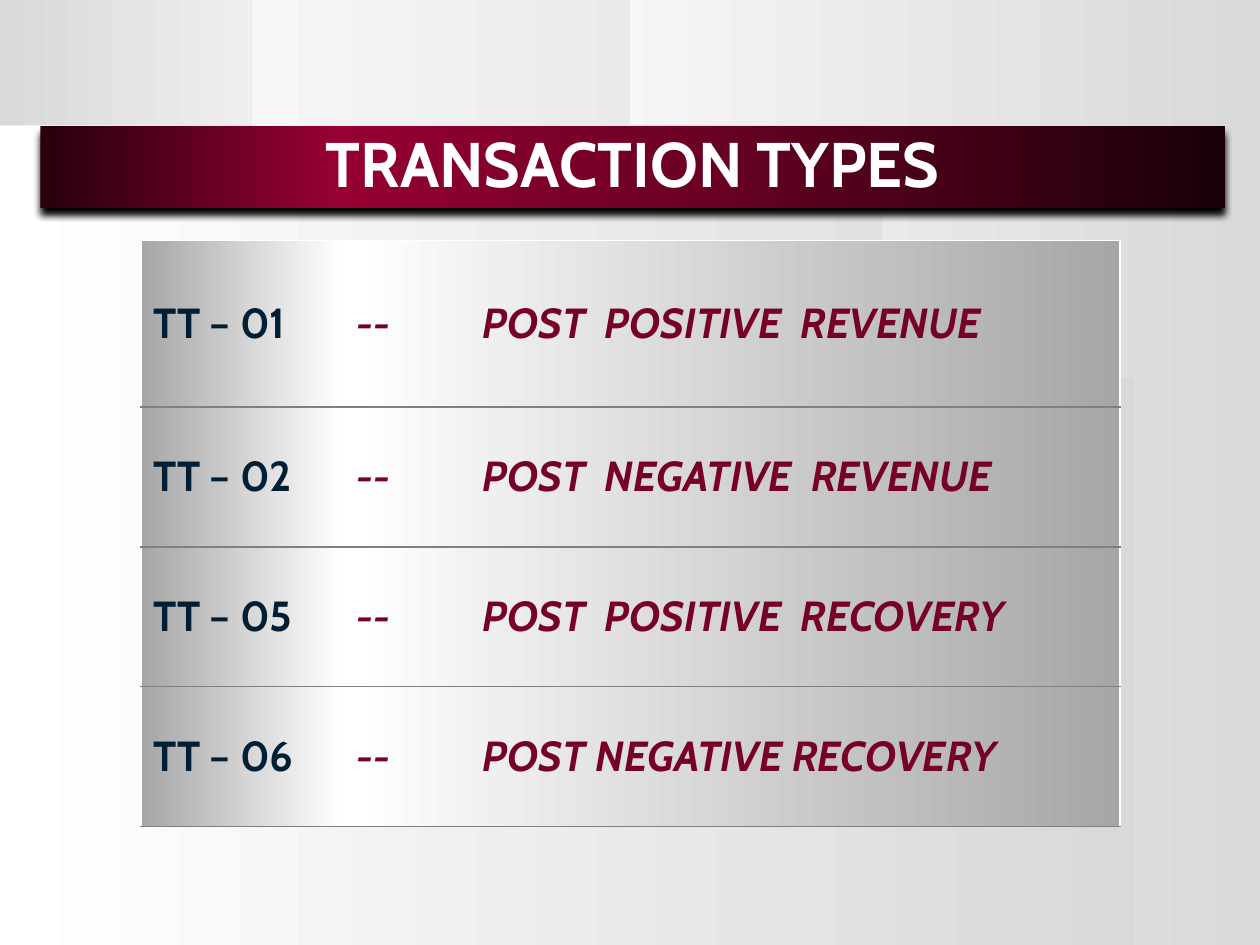
import math
from lxml import etree
from pptx import Presentation
from pptx.dml.color import RGBColor
from pptx.enum import shapes, text
from pptx.oxml import ns
from pptx.util import Inches, Pt

HEADING = "TRANSACTION TYPES"
TRANSACTIONS = [
    ("TT – 01", "--\tPOST  POSITIVE  REVENUE"),
    ("TT – 02", "--\tPOST  NEGATIVE  REVENUE"),
    ("TT – 05", "--\tPOST  POSITIVE  RECOVERY"),
    ("TT – 06", "--\tPOST NEGATIVE RECOVERY"),
]
COLUMNS = [(1.61, "001E34", False, 0), (6.16, "760027", True, 180)]
ROW_HEIGHTS = [1.32, 1.11, 1.11, 1.11]
BACKDROP = [(0, "D9D9D9"), (100, "FFFFFF")]
BANNER = [(1, "2A000F"), (25, "970035"), (52, "700028"), (100, "1A0009")]
CELL = [(0, "A6A6A6"), (99, "FFFFFF")]
PANELS = [(0, 3.38, 0), (3.36, 6.64, 180)]
CENTER_X, CENTER_Y, RADIUS = 3.43, 6.32, 5.94
DISC_LEFT, SLIDE_BOTTOM = 0.01, 7.5


def sub(parent, tag, **attrs):
    return etree.SubElement(parent, ns.qn(tag), attrs)


def add_color(parent, color):
    sub(parent, "a:srgbClr", val=color)


def set_gradient(fill, props, stops, angle):
    fill.gradient()
    fill.gradient_angle = angle
    stop_list = props.find(".//" + ns.qn("a:gsLst"))
    for stop in list(stop_list):
        stop_list.remove(stop)
    for position, color in stops:
        add_color(sub(stop_list, "a:gs", pos=str(position * 1000)), color)


def finish_backdrop(part, angle):
    part.shadow.inherit = False
    part.line.fill.background()
    set_gradient(part.fill, part._element.spPr, BACKDROP, angle)


def style_text(paragraph, size, color, italic=False):
    for run in paragraph.runs:
        font = run.font
        font.name, font.size = "Cabin", Pt(size)
        font.bold, font.italic = True, italic
        font.color.rgb = RGBColor.from_string(color)


def set_borders(props, top):
    sides = [("L", "FFFFFF"), ("R", "FFFFFF"), ("T", top), ("B", "808080")]
    for side, color in sides:
        border = sub(props, "a:ln" + side, w=str(Pt(1)))
        add_color(sub(border, "a:solidFill"), color)


def add_background(slide):
    for left, width, angle in PANELS:
        panel = slide.shapes.add_shape(
            shapes.MSO_SHAPE.RECTANGLE, Inches(left), 0, Inches(width), Inches(7.5))
        finish_backdrop(panel, angle)
    start = math.pi - math.acos((CENTER_X - DISC_LEFT) / RADIUS)
    end = -math.asin((SLIDE_BOTTOM - CENTER_Y) / RADIUS)
    steps = 60
    angles = [start + (end - start) * i / steps for i in range(steps + 1)]
    arc = [(CENTER_X + RADIUS * math.cos(a), CENTER_Y - RADIUS * math.sin(a))
           for a in angles]
    builder = slide.shapes.build_freeform(DISC_LEFT, SLIDE_BOTTOM, scale=Inches(1))
    builder.add_line_segments(arc, close=True)
    finish_backdrop(builder.convert_to_shape(), 180)


def add_heading(slide):
    title = slide.shapes.title
    slide.shapes._spTree.append(title._element)
    title.left, title.top = Inches(0.32), Inches(1)
    title.width, title.height = Inches(9.4), Inches(0.65)
    title.text_frame.text = HEADING
    title.text_frame.vertical_anchor = text.MSO_ANCHOR.MIDDLE
    paragraph = title.text_frame.paragraphs[0]
    paragraph.alignment = text.PP_ALIGN.CENTER
    paragraph.line_spacing = 0.9
    style_text(paragraph, 36, "FFFFFF")
    props = title._element.spPr
    set_gradient(title.fill, props, BANNER, 0)
    shadow = sub(sub(props, "a:effectLst"), "a:outerShdw", blurRad=str(Pt(4)),
                 dist=str(Pt(4)), dir="5400000", rotWithShape="0")
    add_color(shadow, "000000")


def add_transactions(slide):
    table = slide.shapes.add_table(
        len(TRANSACTIONS), len(COLUMNS), Inches(1.12), Inches(1.91),
        Inches(sum(column[0] for column in COLUMNS)), Inches(sum(ROW_HEIGHTS))).table
    table.first_row = table.horz_banding = False
    for r, transaction in enumerate(TRANSACTIONS):
        table.rows[r].height = Inches(ROW_HEIGHTS[r])
        for c, (width, color, italic, angle) in enumerate(COLUMNS):
            table.columns[c].width = Inches(width)
            cell = table.cell(r, c)
            cell.text_frame.text = transaction[c]
            cell.vertical_anchor = text.MSO_ANCHOR.MIDDLE
            paragraph = cell.text_frame.paragraphs[0]
            if "\t" in transaction[c]:
                tabs = sub(paragraph._p.get_or_add_pPr(), "a:tabLst")
                sub(tabs, "a:tab", pos=str(Inches(1)), algn="l")
            style_text(paragraph, 24, color, italic)
            props = cell._tc.get_or_add_tcPr()
            set_borders(props, "808080" if r else "FFFFFF")
            set_gradient(cell.fill, props, CELL, angle)


def main():
    deck = Presentation()
    deck.slide_width, deck.slide_height = Inches(10), Inches(7.5)
    slide = deck.slides.add_slide(deck.slide_layouts[5])
    add_background(slide)
    add_heading(slide)
    add_transactions(slide)
    deck.save("out.pptx")


if __name__ == "__main__":
    main()
